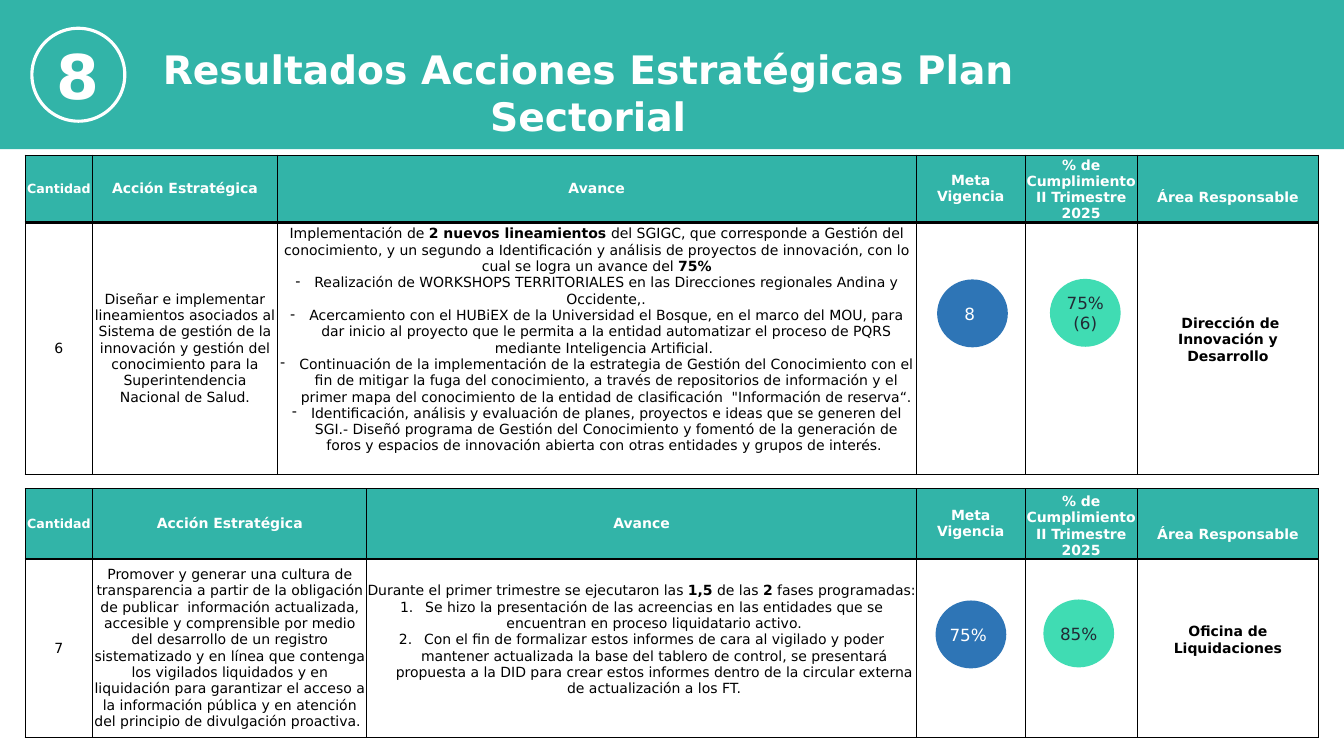
"""Build the slide of strategic action results for the sector plan."""
from dataclasses import dataclass

from lxml import etree
from pptx import Presentation
from pptx.dml.color import RGBColor
from pptx.enum.shapes import MSO_SHAPE
from pptx.enum.text import MSO_ANCHOR, MSO_AUTO_SIZE, PP_ALIGN
from pptx.oxml.ns import qn
from pptx.util import Pt

RECTANGLE, OVAL = MSO_SHAPE.RECTANGLE, MSO_SHAPE.OVAL
TOP, MIDDLE, BOTTOM = MSO_ANCHOR.TOP, MSO_ANCHOR.MIDDLE, MSO_ANCHOR.BOTTOM
CENTER = PP_ALIGN.CENTER
NO_AUTOFIT = MSO_AUTO_SIZE.NONE


@dataclass(frozen=True)
class Theme:
    font: str = "DejaVu Sans"
    teal: str = "32B4A8"
    blue: str = "2E75B6"
    mint: str = "40DCB3"
    dark: str = "222A35"
    black: str = "000000"
    white: str = "FFFFFF"
    title_size: float = 28
    number_size: float = 44
    circle_size: float = 12
    body_size: float = 10
    small_size: float = 9
    thin: float = 1
    thick: float = 2
    ring: float = 2.25


THEME = Theme()


@dataclass(frozen=True)
class Run:
    text: str
    bold: bool = False


@dataclass(frozen=True)
class Para:
    runs: tuple[Run, ...]
    marker: str = ""
    indent: float = 0


@dataclass(frozen=True)
class CellText:
    paras: tuple[Para, ...] = ()
    anchor: MSO_ANCHOR = MIDDLE
    bottom: float = 0
    size: float = THEME.body_size


@dataclass(frozen=True)
class ActionTable:
    top: float
    action_width: float
    progress_width: float
    row_heights: tuple[float, float]
    body: tuple[CellText, ...]


@dataclass(frozen=True)
class Indicator:
    left: float
    top: float
    text: str
    fill: str
    color: str


def plain(text: str, bold: bool = False) -> tuple[Para, ...]:
    return (Para((Run(text, bold),)),)


def dash(text: str) -> Para:
    return Para((Run(text),), "-", 13.5)


def numbered(text: str) -> Para:
    return Para((Run(text),), "1.", 18)


LEFT = 18
COUNT_WIDTH, GOAL_WIDTH, RATE_WIDTH, AREA_WIDTH = 48.2, 77.8, 80, 129.7
CIRCLE_WIDTH, CIRCLE_HEIGHT = 50.5, 48.5
LIFT = 11.64

HEADER = (
    CellText(plain("Cantidad", True), size=THEME.small_size),
    CellText(plain("Acción Estratégica", True)),
    CellText(plain("Avance", True)),
    CellText(plain("Meta\nVigencia", True)),
    CellText(plain("% de Cumplimiento II Trimestre 2025", True), BOTTOM),
    CellText(plain("Área Responsable", True), BOTTOM, LIFT),
)

TABLES = (
    ActionTable(110.8, 131.8, 456.5, (48, 180), (
        CellText(plain("6")),
        CellText(plain("Diseñar e implementar lineamientos asociados al Sistema de gestión de la innovación y gestión del conocimiento para la Superintendencia Nacional de Salud.")),
        CellText((
            Para((
                Run("Implementación de "),
                Run("2 nuevos lineamientos ", True),
                Run("del SGIGC, que corresponde a Gestión del conocimiento, y un segundo a Identificación y análisis de proyectos de innovación, con lo cual se logra un avance del "),
                Run("75%", True),
            )),
            dash("Realización de WORKSHOPS TERRITORIALES en las Direcciones regionales Andina y Occidente,."),
            dash("Acercamiento con el HUBiEX de la Universidad el Bosque, en el marco del MOU, para dar inicio al proyecto que le permita a la entidad automatizar el proceso de PQRS mediante Inteligencia Artificial. "),
            dash("Continuación de la implementación de la estrategia de Gestión del Conocimiento con el fin de mitigar la fuga del conocimiento, a través de repositorios de información y el primer mapa del conocimiento de la entidad de clasificación  \"Información de reserva“."),
            dash("Identificación, análisis y evaluación de planes, proyectos e ideas que se generen del SGI.- Diseñó programa de Gestión del Conocimiento y fomentó de la generación de foros y espacios de innovación abierta con otras entidades y grupos de interés. "),
        ), bottom=LIFT),
        CellText(),
        CellText(),
        CellText(plain(" Dirección de Innovación y Desarrollo", True), bottom=LIFT),
    )),
    ActionTable(349.1, 195.8, 392.5, (50.2, 127.6), (
        CellText(plain("7")),
        CellText(plain("Promover y generar una cultura de transparencia a partir de la obligación de publicar  información actualizada, accesible y comprensible por medio del desarrollo de un registro sistematizado y en línea que contenga los vigilados liquidados y en liquidación para garantizar el acceso a la información pública y en atención del principio de divulgación proactiva. ")),
        CellText((
            Para((
                Run("Durante el primer trimestre se ejecutaron las "),
                Run("1,5", True),
                Run(" de las "),
                Run("2", True),
                Run(" fases programadas: "),
            )),
            numbered("Se hizo la presentación de las acreencias en las entidades que se encuentran en proceso liquidatario activo."),
            numbered("Con el fin de formalizar estos informes de cara al vigilado y poder mantener actualizada la base del tablero de control, se presentará propuesta a la DID para crear estos informes dentro de la circular externa de actualización a los FT."),
        ), bottom=LIFT),
        CellText(),
        CellText(),
        CellText(plain("Oficina de Liquidaciones", True), bottom=LIFT),
    )),
)

INDICATORS = (
    Indicator(669.4, 199.6, "8 ", THEME.blue, THEME.white),
    Indicator(668.3, 428.9, "75% ", THEME.blue, THEME.white),
    Indicator(745.3, 428.2, "85%", THEME.mint, THEME.dark),
    Indicator(750, 199.2, "75% (6)", THEME.mint, THEME.dark),
)


def rgb(color: str) -> RGBColor:
    return RGBColor.from_string(color)


def write(frame, paras: tuple[Para, ...], size: float, color: str) -> None:
    for index, para in enumerate(paras):
        paragraph = frame.paragraphs[0] if index == 0 else frame.add_paragraph()
        paragraph.alignment = CENTER
        if para.marker:
            properties = paragraph._p.get_or_add_pPr()
            properties.set("marL", str(Pt(para.indent)))
            properties.set("indent", str(-Pt(para.indent)))
            if para.marker == "1.":
                etree.SubElement(properties, qn("a:buAutoNum"), type="arabicPeriod")
            else:
                etree.SubElement(properties, qn("a:buChar"), char=para.marker)
        for part in para.runs:
            for line, text in enumerate(part.text.split("\n")):
                if line:
                    paragraph.add_line_break()
                run = paragraph.add_run()
                run.text = text
                run.font.name = THEME.font
                run.font.size = Pt(size)
                run.font.bold = part.bold
                run.font.color.rgb = rgb(color)


def set_borders(cell, bottom: float) -> None:
    properties = cell._tc.get_or_add_tcPr()
    for side in "LRTB":
        width = bottom if side == "B" else THEME.thin
        border = etree.SubElement(properties, qn(f"a:ln{side}"), w=str(Pt(width)))
        fill = etree.SubElement(border, qn("a:solidFill"))
        etree.SubElement(fill, qn("a:srgbClr"), val=THEME.black)


def add_action_table(slide, spec_table: ActionTable) -> None:
    widths = (COUNT_WIDTH, spec_table.action_width, spec_table.progress_width,
              GOAL_WIDTH, RATE_WIDTH, AREA_WIDTH)
    heights = spec_table.row_heights
    table = slide.shapes.add_table(len(heights), len(widths), Pt(LEFT), Pt(spec_table.top),
                                   Pt(sum(widths)), Pt(sum(heights))).table
    table.first_row = table.horz_banding = False
    for column, width in zip(table.columns, widths):
        column.width = Pt(width)
    for row_index, contents in enumerate((HEADER, spec_table.body)):
        is_header = row_index == 0
        table.rows[row_index].height = Pt(heights[row_index])
        for cell, content in zip(table.rows[row_index].cells, contents):
            set_borders(cell, THEME.thick if is_header else THEME.thin)
            if is_header:
                cell.fill.solid()
                cell.fill.fore_color.rgb = rgb(THEME.teal)
            else:
                cell.fill.background()
            cell.margin_left = cell.margin_right = cell.margin_top = 0
            cell.margin_bottom = Pt(content.bottom)
            cell.vertical_anchor = content.anchor
            write(cell.text_frame, content.paras, content.size,
                  THEME.white if is_header else THEME.black)


def add_plain_shape(slide, kind: MSO_SHAPE, left: float, top: float, width: float,
                    height: float, fill: str = ""):
    shape = slide.shapes.add_shape(kind, Pt(left), Pt(top), Pt(width), Pt(height))
    shape.shadow.inherit = False
    shape.line.fill.background()
    if fill:
        shape.fill.solid()
        shape.fill.fore_color.rgb = rgb(fill)
    else:
        shape.fill.background()
    frame = shape.text_frame
    frame.margin_left = frame.margin_right = frame.margin_top = frame.margin_bottom = 0
    frame.vertical_anchor = MIDDLE
    return shape


def main() -> None:
    deck = Presentation()
    deck.slide_width, deck.slide_height = Pt(960), Pt(540)
    slide = deck.slides.add_slide(deck.slide_layouts[5])

    title = slide.shapes.title
    band = add_plain_shape(slide, RECTANGLE, 0, 0, 960, 106.6, THEME.teal)
    title._element.addprevious(band._element)
    title.left, title.top, title.width, title.height = Pt(102.2), Pt(28.8), Pt(635.8), Pt(74.9)
    title.text_frame.word_wrap = True
    title.text_frame.auto_size = NO_AUTOFIT
    title.text_frame.vertical_anchor = TOP
    write(title.text_frame, plain("Resultados Acciones Estratégicas Plan Sectorial", True),
          THEME.title_size, THEME.white)

    for action_table in TABLES:
        add_action_table(slide, action_table)
    for item in INDICATORS:
        circle = add_plain_shape(slide, OVAL, item.left, item.top,
                                 CIRCLE_WIDTH, CIRCLE_HEIGHT, item.fill)
        write(circle.text_frame, plain(item.text), THEME.circle_size, item.color)

    section_ring = add_plain_shape(slide, OVAL, 22.8, 20.2, 66.4, 66.4)
    section_ring.line.color.rgb = rgb(THEME.white)
    section_ring.line.width = Pt(THEME.ring)
    write(section_ring.text_frame, plain("8", True), THEME.number_size, THEME.white)

    deck.save("out.pptx")


if __name__ == "__main__":
    main()
